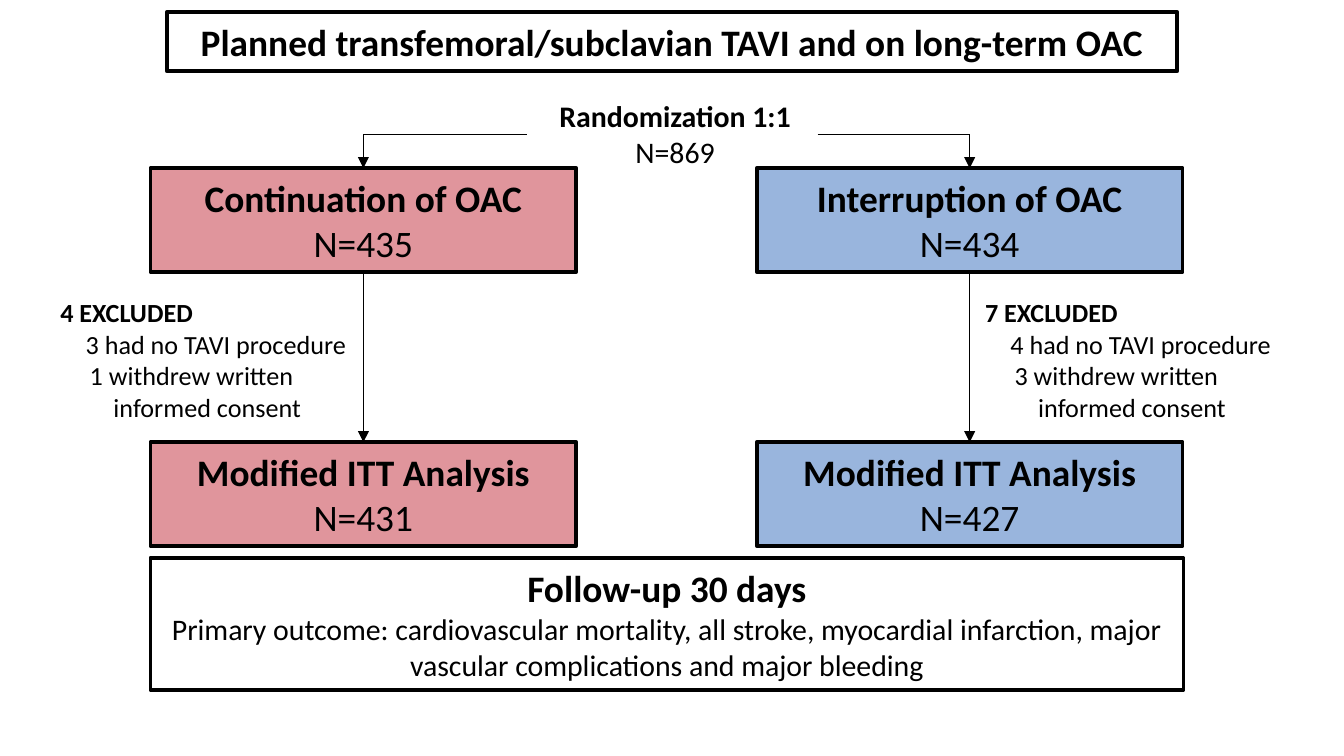
from lxml import etree
from pptx import Presentation
from pptx.dml.color import RGBColor
from pptx.enum import shapes, text
from pptx.oxml import ns
from pptx.util import Pt

BLACK = RGBColor(0, 0, 0)
WHITE = RGBColor(255, 255, 255)
ROSE = RGBColor(0xE0, 0x95, 0x9C)
BLUE = RGBColor(0x99, 0xB5, 0xDD)
MID, LEFT = text.PP_ALIGN.CENTER, text.PP_ALIGN.LEFT

# Content: each line is (words, size, bold, indent)
TITLE = [("Planned transfemoral/subclavian TAVI and on long-term OAC", 20, True, 0)]
SPLIT = [("Randomization 1:1", 16, True, 2.9), ("N=869", 16, False, 2.9)]
FOLLOW = [
    ("Follow-up 30 days", 20, True, 0),
    ("Primary outcome: cardiovascular mortality, all stroke, myocardial "
     "infarction, major vascular complications and major bleeding", 16, False, 0),
]
ARMS = [
    dict(name="Continuation of OAC", start=435, out=4, none=3, quit=1, end=431,
         fill=ROSE, left=80.6, note=25.2, stem=282.2),
    dict(name="Interruption of OAC", start=434, out=7, none=4, quit=3, end=427,
         fill=BLUE, left=405.4, note=520.6, stem=438),
]

# Layout
BOX_W, BOX_H = 228.2, 55.6
TOP, LOW = 90.1, 236.9
FORK = 72

prs = Presentation()
prs.slide_width, prs.slide_height = Pt(720), Pt(405)
slide = prs.slides.add_slide(prs.slide_layouts[6])


def write(shape, lines, align):
    frame = shape.text_frame
    frame.word_wrap = True
    for i, (words, size, bold, indent) in enumerate(lines):
        par = frame.paragraphs[0] if i == 0 else frame.add_paragraph()
        par.alignment = align
        if indent:
            props = par._p.get_or_add_pPr()
            props.set("marL", str(Pt(indent)))
            props.set("indent", "0")
        run = par.add_run()
        run.text = words
        font = run.font
        font.name, font.size, font.bold = "Calibri", Pt(size), bold
        font.color.rgb = BLACK


def add_box(x, y, w, h, fill, lines):
    box = slide.shapes.add_shape(shapes.MSO_SHAPE.RECTANGLE, Pt(x), Pt(y), Pt(w), Pt(h))
    box.shadow.inherit = False
    box.fill.solid()
    box.fill.fore_color.rgb = fill
    box.line.color.rgb = BLACK
    box.line.width = Pt(2)
    box.text_frame.vertical_anchor = text.MSO_ANCHOR.MIDDLE
    write(box, lines, MID)
    return box


def add_note(x, y, w, h, lines, align):
    write(slide.shapes.add_textbox(Pt(x), Pt(y), Pt(w), Pt(h)), lines, align)


def add_line(x1, y1, x2, y2, head=False):
    line = slide.shapes.add_connector(
        shapes.MSO_CONNECTOR.STRAIGHT, Pt(x1), Pt(y1), Pt(x2), Pt(y2))
    line.line.color.rgb = BLACK
    line.line.width = Pt(0.75)
    if head:
        tail = etree.SubElement(line.line._get_or_add_ln(), ns.qn("a:tailEnd"))
        tail.set("type", "triangle")
    etree.SubElement(line._element.spPr, ns.qn("a:effectLst"))
    return line


# Title and randomization
add_box(89.3, 6.5, 541.4, 31.7, WHITE, TITLE)
add_note(282.2, 49, 156.2, 46, SPLIT, MID)

# The two arms
for arm in ARMS:
    first, last = [
        add_box(arm["left"], y, BOX_W, BOX_H, arm["fill"],
                [(name, 20, True, 0), (f"N={count}", 20, False, 0)])
        for y, name, count in ((TOP, arm["name"], arm["start"]),
                               (LOW, "Modified ITT Analysis", arm["end"]))
    ]
    mid = arm["left"] + BOX_W / 2
    add_line(arm["stem"], FORK, mid, FORK)
    add_line(mid, FORK, mid, TOP, head=True).end_connect(first, 0)
    down = add_line(mid, TOP + BOX_H, mid, LOW, head=True)
    down.begin_connect(first, 2)
    down.end_connect(last, 0)
    add_note(arm["note"], 155.5, 169.2, 74.9, [
        (f"{arm['out']} EXCLUDED", 14, True, 0),
        (f"{arm['none']} had no TAVI procedure", 14, False, 13.6),
        (f"{arm['quit']} withdrew written", 14, False, 15.8),
        ("informed consent", 14, False, 28.5),
    ], LEFT)

# Follow-up
add_box(80.6, 298.9, 553.5, 70.6, WHITE, FOLLOW)

prs.save("out.pptx")
